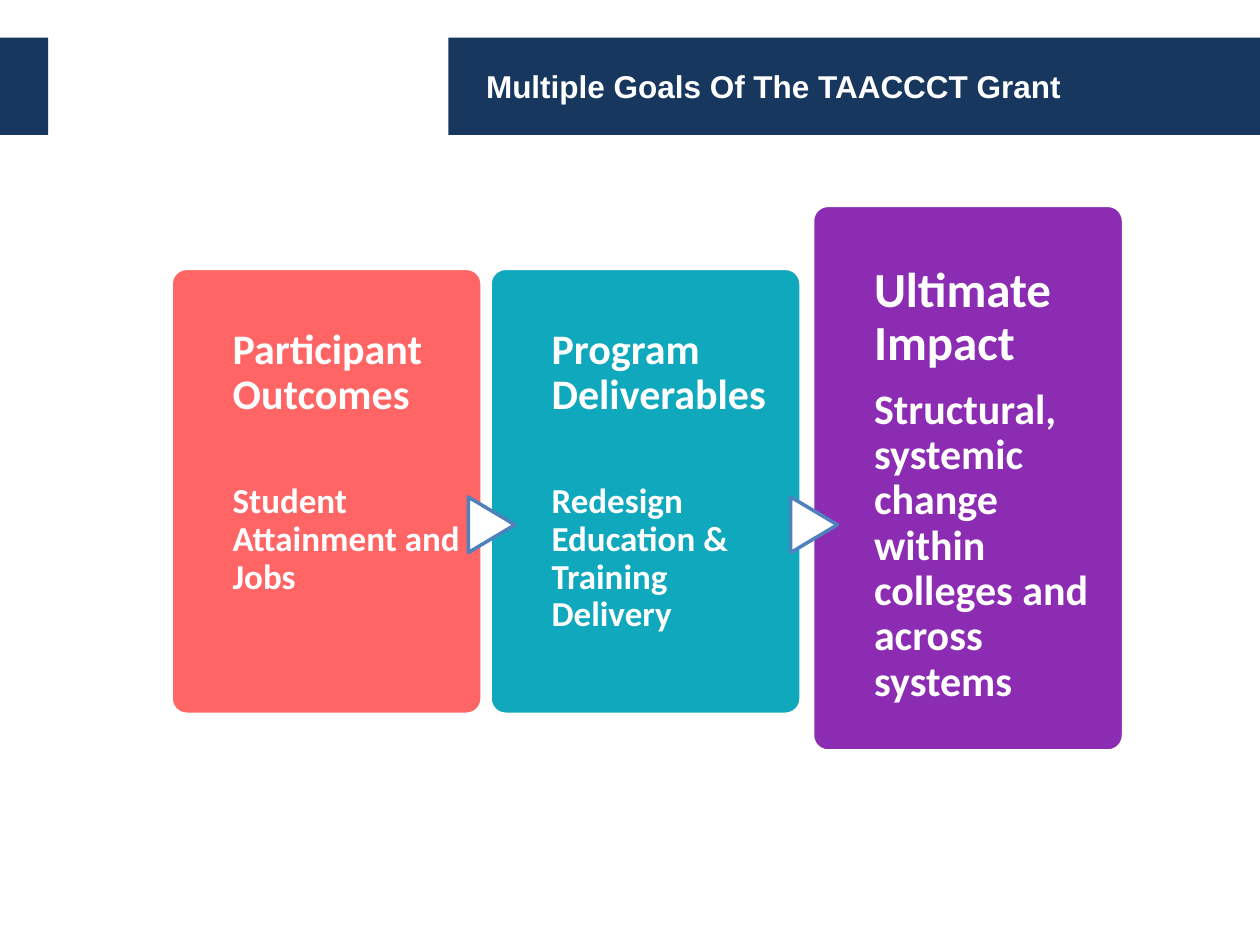
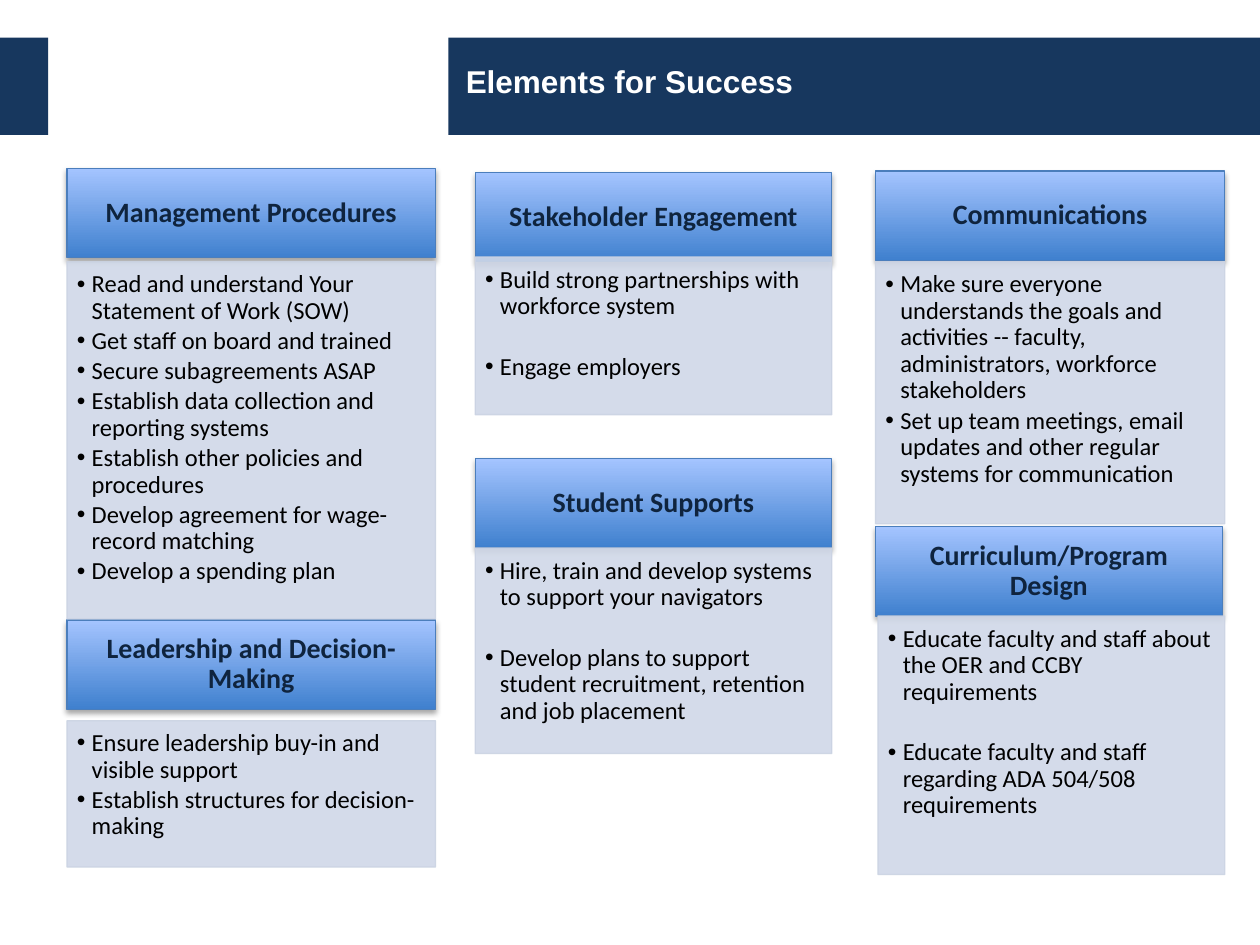
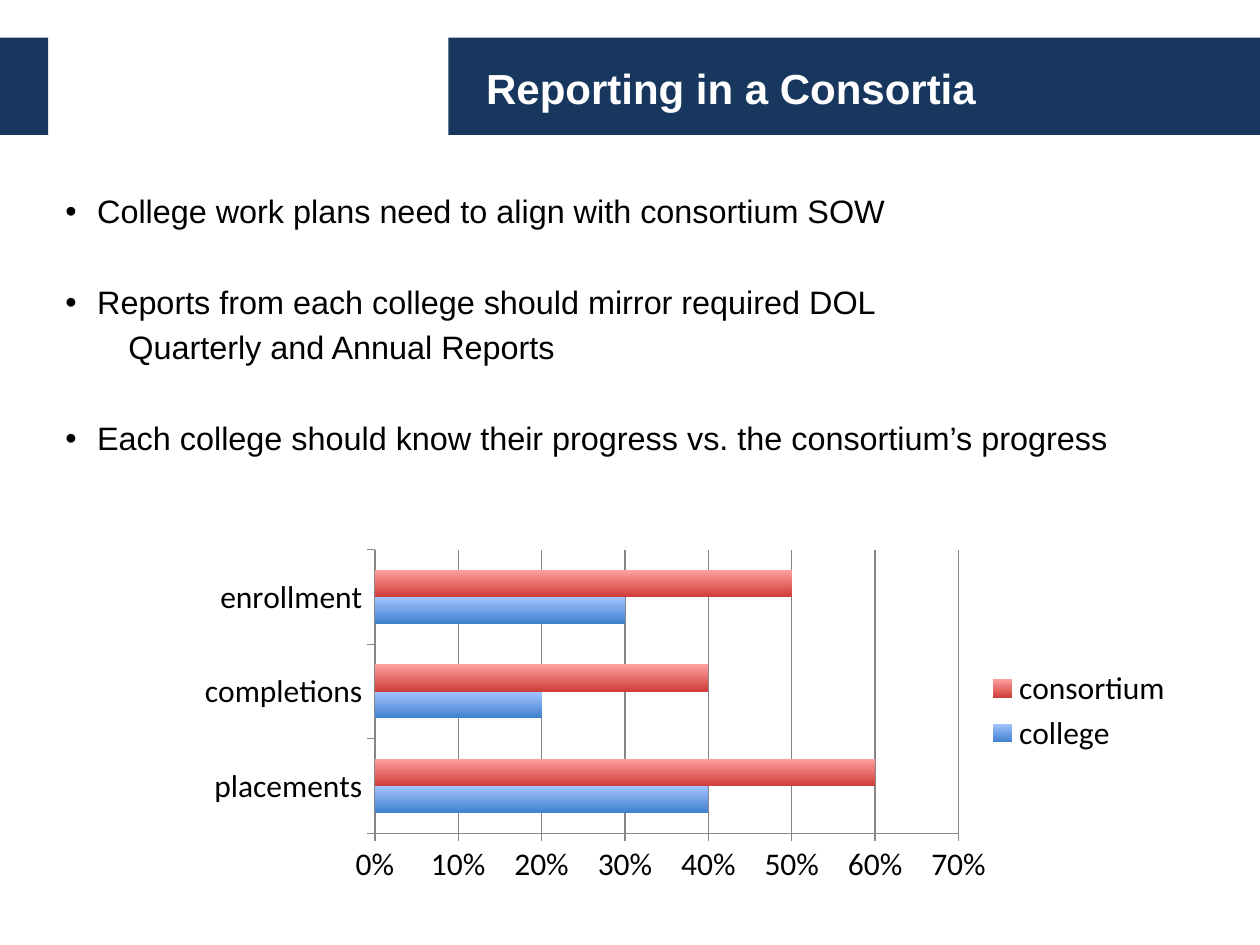
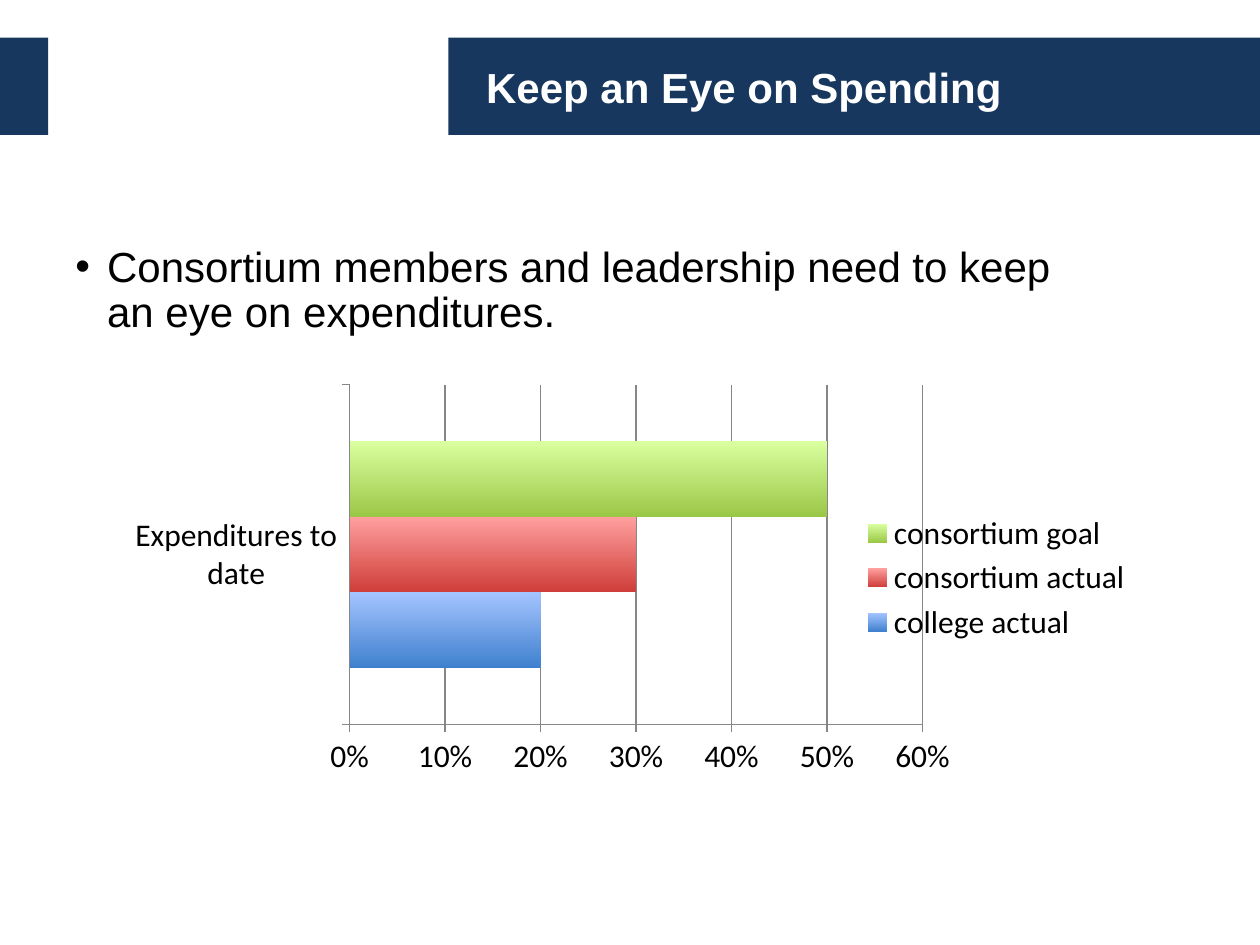
from lxml import etree
from pptx import Presentation
from pptx import util as u
from pptx.chart import data as cd
from pptx.dml import color as dc
from pptx.enum import chart as ce, shapes, text
from pptx.oxml import ns

Cm, Pt = u.Cm, u.Pt
SHAPE = shapes.MSO_SHAPE
TOP, MID = text.MSO_ANCHOR.TOP, text.MSO_ANCHOR.MIDDLE
INSET = (0.25, 0.13, 0.25, 0.13)

HUES = {
    "navy": "17375E", "white": "FFFFFF", "black": "000000", "ink": "0F243E",
    "coral": "FF6565", "teal": "10A8BC", "purple": "8C2CB2", "edge": "4F81BD",
    "rim": "4B7EBC", "pale": "D0D8E8", "trim": "CBD3E3", "grid": "868686",
}
# Dark and light end of each gradient
FADES = {
    "blue": ("3F80CE", "A4C4FF"),
    "red": ("CE3D39", "FFA09E"),
    "green": ("9BC747", "D9FF9F"),
}


def rgb(name):
    return dc.RGBColor.from_string(HUES.get(name, name))


def add(parent, tag, **attrs):
    node = etree.SubElement(parent, ns.qn(tag))
    for key, value in attrs.items():
        node.set(key, str(value))
    return node


def fade(fill, name):
    fill.gradient()
    fill.gradient_angle = 90
    for stop, hue in zip(fill.gradient_stops, FADES[name]):
        stop.color.rgb = rgb(hue)


class Deck:
    def __init__(self):
        self.prs = Presentation()
        self.prs.slide_width, self.prs.slide_height = Cm(25.4), Cm(19.05)
        self.page = None

    def start(self, title, size=24, box=(9.55, 0.76, 14.58, 1.96), anchor=MID):
        """New slide with the navy bands and a title."""
        self.page = self.prs.slides.add_slide(self.prs.slide_layouts[6]).shapes
        for left, width in ((9.04, 16.36), (0, 0.97)):
            self.shape(SHAPE.RECTANGLE, (left, 0.76, width, 1.96), "navy")
        frame = self.label(box, anchor=anchor)
        self.put(frame, title, size, "white", bold=True, font="Arial")

    def shape(self, kind, box, fill, line=None, weight=2.0):
        item = self.page.add_shape(kind, *map(Cm, box))
        item.shadow.inherit = False
        if fill in FADES:
            fade(item.fill, fill)
        else:
            item.fill.solid()
            item.fill.fore_color.rgb = rgb(fill)
        if line:
            item.line.color.rgb = rgb(line)
            item.line.width = Pt(weight)
        else:
            item.line.fill.background()
        return item

    def setup(self, frame, inset=INSET, anchor=TOP):
        frame.word_wrap = True
        frame.vertical_anchor = anchor
        (frame.margin_left, frame.margin_top,
         frame.margin_right, frame.margin_bottom) = map(Cm, inset)
        return frame

    def label(self, box, inset=INSET, anchor=TOP):
        frame = self.page.add_textbox(*map(Cm, box)).text_frame
        return self.setup(frame, inset, anchor)

    def put(self, frame, words, size, hue, bold=False, font="Calibri",
            align=text.PP_ALIGN.LEFT, lead=None, before=0, after=0,
            indent=0, bullet=False):
        """Fill the first paragraph, or add one after it."""
        para = frame.paragraphs[0]
        if para.runs:
            para = frame.add_paragraph()
            para.space_before = Pt(before)
        para.text = words
        props = para._p.get_or_add_pPr()
        if indent:
            props.set("marL", str(Cm(indent)))
        if bullet:
            props.set("indent", str(-Cm(indent)))
            add(props, "a:buFont", typeface="Arial")
            add(props, "a:buChar", char="•")
        para.alignment = align
        para.space_after = Pt(after)
        if lead:
            para.line_spacing = lead
        para.font.name, para.font.size, para.font.bold = font, Pt(size), bold
        para.font.color.rgb = rgb(hue)

    def card(self, left, top, height, hue, head, note, size, gap, arrow):
        """Rounded goal card, with an arrow pointing into it if asked."""
        card = self.shape(SHAPE.ROUNDED_RECTANGLE, (left, top, 6.27, height),
                          hue, "white")
        card.adjustments[0] = 0.05
        if arrow:
            tip = self.shape(SHAPE.FLOWCHART_EXTRACT,
                             (left - 0.53, 10.11, 1.12, 0.94), "white", "edge")
            tip.rotation = 90
        frame = self.label((left + 1.24, top, 4.67, height), (0, 1.2, 0, 0))
        self.put(frame, head, size, "white", True, lead=0.9, after=gap)
        self.put(frame, note, size - 4, "white", True, lead=0.9)

    def panel(self, col, top, low, height, head, notes, gap=2.1, shift=0.0):
        """Gradient heading above a pale box of bullets."""
        left, width = col
        width -= shift
        bar = self.shape(SHAPE.RECTANGLE, (left, top, width, 1.8),
                         "blue", "rim", 0.75)
        glow = add(bar._element.spPr.find(ns.qn("a:effectLst")), "a:outerShdw",
                   blurRad=40000, dist=23000, dir=5400000, rotWithShape=0)
        add(add(glow, "a:srgbClr", val=HUES["black"]), "a:alpha", val=35000)
        frame = self.setup(bar.text_frame, (0.25, 0.15, 0.25, 0.15), MID)
        self.put(frame, head, 16, "ink", True, lead=0.9,
                 align=text.PP_ALIGN.CENTER)

        body = self.shape(SHAPE.RECTANGLE, (left + shift, low, width, height),
                          "pale", "trim", 0.75)
        for tint in body._element.spPr.iter(ns.qn("a:srgbClr")):
            add(tint, "a:alpha", val=90000)
        frame = self.setup(body.text_frame, (0.2, 0.2, 0.25, 0.28))
        for note in notes:
            self.put(frame, note, 14, "black", lead=0.9, after=gap,
                     indent=0.3, bullet=True)

    def point(self, frame, words, size, before=3, indent=0.64, bullet=True):
        self.put(frame, words, size, "black", font="Arial", lead=0.9,
                 before=before, after=3, indent=indent, bullet=bullet)

    def bars(self, box, cats, rows, top):
        """Clustered bar chart; rows holds name, fade and values."""
        data = cd.CategoryChartData(number_format="0%")
        data.categories = cats
        for name, _, values in rows:
            data.add_series(name, values)
        chart = self.page.add_chart(ce.XL_CHART_TYPE.BAR_CLUSTERED,
                                    *map(Cm, box), data).chart
        chart.has_title = False
        chart.font.name, chart.font.size = "Calibri", Pt(18)
        chart.font.color.rgb = rgb("black")
        chart.has_legend = True
        chart.legend.position = ce.XL_LEGEND_POSITION.RIGHT
        chart.legend.include_in_layout = False

        plot = chart.plots[0]
        plot.gap_width, plot.vary_by_categories = 150, False
        for series, (_, hue, _) in zip(plot.series, rows):
            fade(series.format.fill, hue)
            series.invert_if_negative = False

        # Axes
        scale = chart.value_axis
        scale.minimum_scale, scale.maximum_scale = 0, top
        scale.major_unit = 0.1
        scale.has_major_gridlines = True
        scale.tick_labels.number_format = "0%"
        scale.tick_labels.number_format_is_linked = False
        for axis in (scale, chart.category_axis):
            axis.major_tick_mark = ce.XL_TICK_MARK.OUTSIDE
            axis.format.line.color.rgb = rgb("grid")
        scale.major_gridlines.format.line.color.rgb = rgb("grid")

        # Fixed plot area
        area = chart._chartSpace.chart.plotArea
        for old in area.findall(ns.qn("c:layout")):
            area.remove(old)
        spot = etree.Element(ns.qn("c:layout"))
        area.insert(0, spot)
        spot = add(spot, "c:manualLayout")
        add(spot, "c:layoutTarget", val="inner")
        for key in ("xMode", "yMode"):
            add(spot, "c:" + key, val="edge")
        for key, val in zip("xywh", (0.25, 0.04, 0.54, 0.81)):
            add(spot, "c:" + key, val=val)


def main():
    deck = Deck()

    # Goals
    deck.start("Multiple Goals Of The TAACCCT Grant", 18)
    deck.card(3.45, 5.41, 8.99, "coral", "Participant Outcomes",
              "Student Attainment and Jobs", 24, 37, False)
    deck.card(9.88, 5.41, 8.99, "teal", "Program Deliverables",
              "Redesign Education & Training Delivery", 24, 37, True)
    deck.card(16.38, 4.14, 11, "purple", "Ultimate Impact",
              "Structural, systemic change within colleges and across systems",
              28, 9.8, True)

    # Elements
    deck.start("Elements for Success", 18, (9.14, 1.12, 15.98, 1.02), TOP)
    one, two, three = (1.35, 7.43), (9.58, 7.19), (17.65, 7.04)
    deck.panel(one, 12.5, 14.53, 2.95, "Leadership and Decision-Making", [
        "Ensure leadership buy-in and visible support",
        "Establish structures for decision-making"])
    deck.panel(two, 3.48, 5.18, 3.18, "Stakeholder Engagement", [
        "Build strong partnerships with workforce system",
        "Engage employers"], 19.6)
    deck.panel(one, 3.4, 5.28, 7.2, "Management Procedures", [
        "Read and understand Your Statement of Work (SOW)",
        "Get staff on board and trained",
        "Secure subagreements ASAP",
        "Establish data collection and reporting systems",
        "Establish other policies and procedures",
        "Develop agreement for wage-record matching",
        "Develop a spending plan"])
    deck.panel(three, 3.45, 5.28, 5.28, "Communications", [
        "Make sure everyone understands the goals and activities -- faculty, "
        "administrators, workforce stakeholders",
        "Set up team meetings, email updates and other regular systems for "
        "communication"])
    deck.panel(three, 10.62, 12.42, 5.21, "Curriculum/Program Design", [
        "Educate faculty and staff about the OER and CCBY requirements",
        "Educate faculty and staff regarding ADA 504/508 requirements"],
        19.6, 0.05)
    deck.panel(two, 9.25, 11.05, 4.14, "Student Supports", [
        "Hire, train and develop systems to support your navigators",
        "Develop plans to support student recruitment, retention and job "
        "placement"], 19.6)

    # Reporting
    deck.start("Reporting in a Consortia", box=(9.55, 1.12, 14.58, 1.3))
    frame = deck.label((1.07, 3.81, 22.23, 5.92))
    deck.point(frame, "College work plans need to align with consortium SOW",
               18.5)
    deck.point(frame, "Reports from each college should mirror required DOL",
               18.5, 29)
    deck.point(frame, "Quarterly and Annual Reports", 18.5, indent=1.27,
               bullet=False)
    deck.point(frame, "Each college should know their progress vs. the "
               "consortium’s progress", 18.5, 29)
    deck.bars((2.11, 10.8, 21.79, 7.06),
              ["placements", "completions", "enrollment"],
              [("college", "blue", (0.4, 0.2, 0.3)),
               ("consortium", "red", (0.6, 0.4, 0.5))], 0.7)

    # Spending
    deck.start("Keep an Eye on Spending")
    frame = deck.label((1.27, 3.61, 20.75, 4.45), (0.25, 1.35, 0.25, 0.13))
    deck.point(frame, "Consortium members and leadership need to keep an eye "
               "on expenditures.", 24)
    deck.bars((1.7, 7.42, 21.39, 8.46), ["Expenditures to date"],
              [("college actual", "blue", (0.2,)),
               ("consortium actual", "red", (0.3,)),
               ("consortium goal", "green", (0.5,))], 0.6)

    deck.prs.save("out.pptx")


if __name__ == "__main__":
    main()
